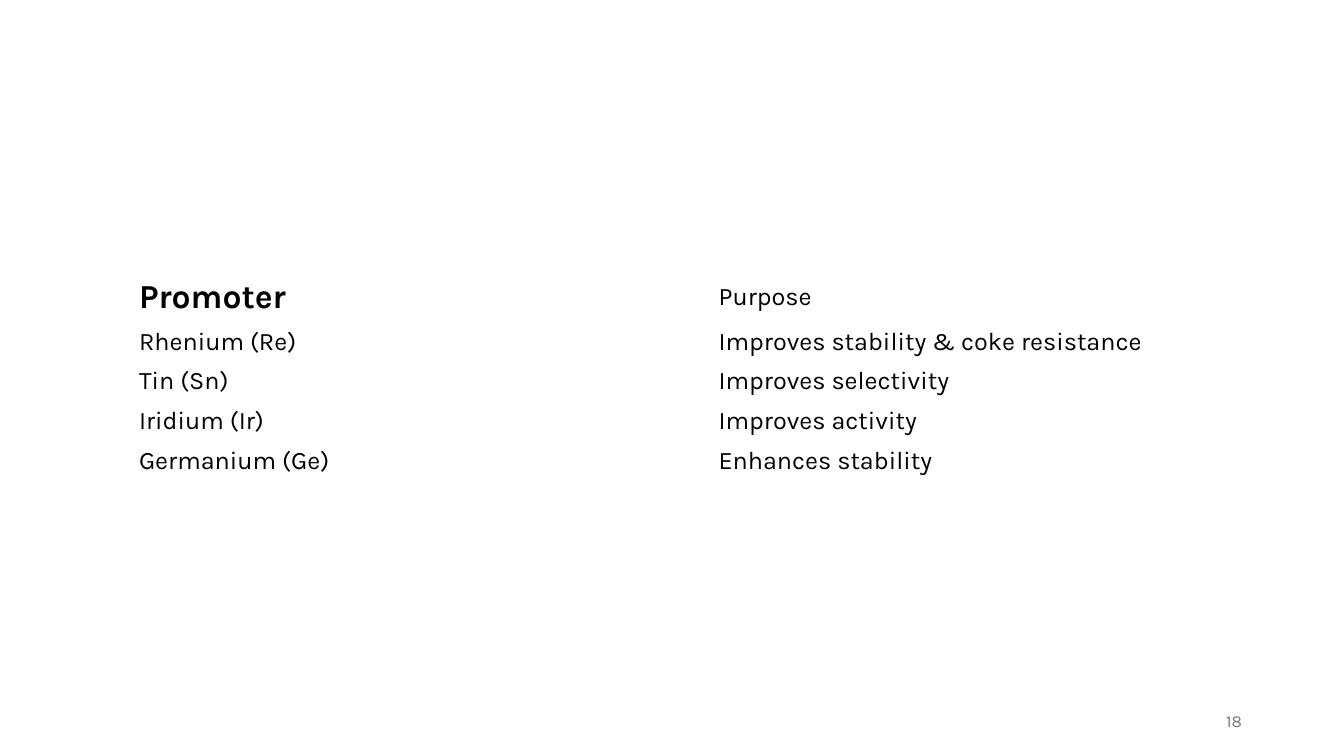
from pptx import Presentation
from pptx.dml.color import RGBColor
from pptx.enum.text import MSO_ANCHOR, PP_ALIGN
from pptx.util import Cm, Pt

FONT = "Karla"
BLACK = "000000"
GREY = "797979"

PROMOTERS = [
    ("Promoter", "Purpose"),
    ("Rhenium (Re)", "Improves stability & coke resistance"),
    ("Tin (Sn)", "Improves selectivity"),
    ("Iridium (Ir)", "Improves activity"),
    ("Germanium (Ge)", "Enhances stability"),
]


def color(hex_value):
    return RGBColor.from_string(hex_value)


def set_font(paragraph, size, hex_value, bold=False):
    font = paragraph.font
    font.name = FONT
    font.size = Pt(size)
    font.bold = bold
    font.color.rgb = color(hex_value)


def add_promoter_table(slide, left, top, width, header_height, row_height):
    height = header_height + row_height * (len(PROMOTERS) - 1)
    table = slide.shapes.add_table(
        len(PROMOTERS), 2, left, top, width, height).table
    table.first_row = False
    table.horz_banding = False
    for row_index, entries in enumerate(PROMOTERS):
        table.rows[row_index].height = row_height if row_index else header_height
        for column_index, entry in enumerate(entries):
            cell = table.cell(row_index, column_index)
            cell.fill.background()
            cell.vertical_anchor = MSO_ANCHOR.MIDDLE
            cell.text = entry
            is_title = row_index == column_index == 0
            set_font(cell.text_frame.paragraphs[0],
                     24 if is_title else 18, BLACK, is_title)


def add_page_number(slide, number, left, top, width, height):
    frame = slide.shapes.add_textbox(left, top, width, height).text_frame
    frame.word_wrap = True
    frame.vertical_anchor = MSO_ANCHOR.MIDDLE
    frame.text = number
    frame.paragraphs[0].alignment = PP_ALIGN.RIGHT
    set_font(frame.paragraphs[0], 12, GREY)


def main():
    presentation = Presentation()
    presentation.slide_width = Cm(33.87)
    presentation.slide_height = Cm(19.05)
    slide = presentation.slides.add_slide(presentation.slide_layouts[6])
    add_promoter_table(slide, Cm(3.25), Cm(6.86), Cm(29.21), Cm(1.25), Cm(1))
    add_page_number(slide, "18", Cm(23.93), Cm(17.65), Cm(7.62), Cm(1.02))
    presentation.save("out.pptx")


if __name__ == "__main__":
    main()
